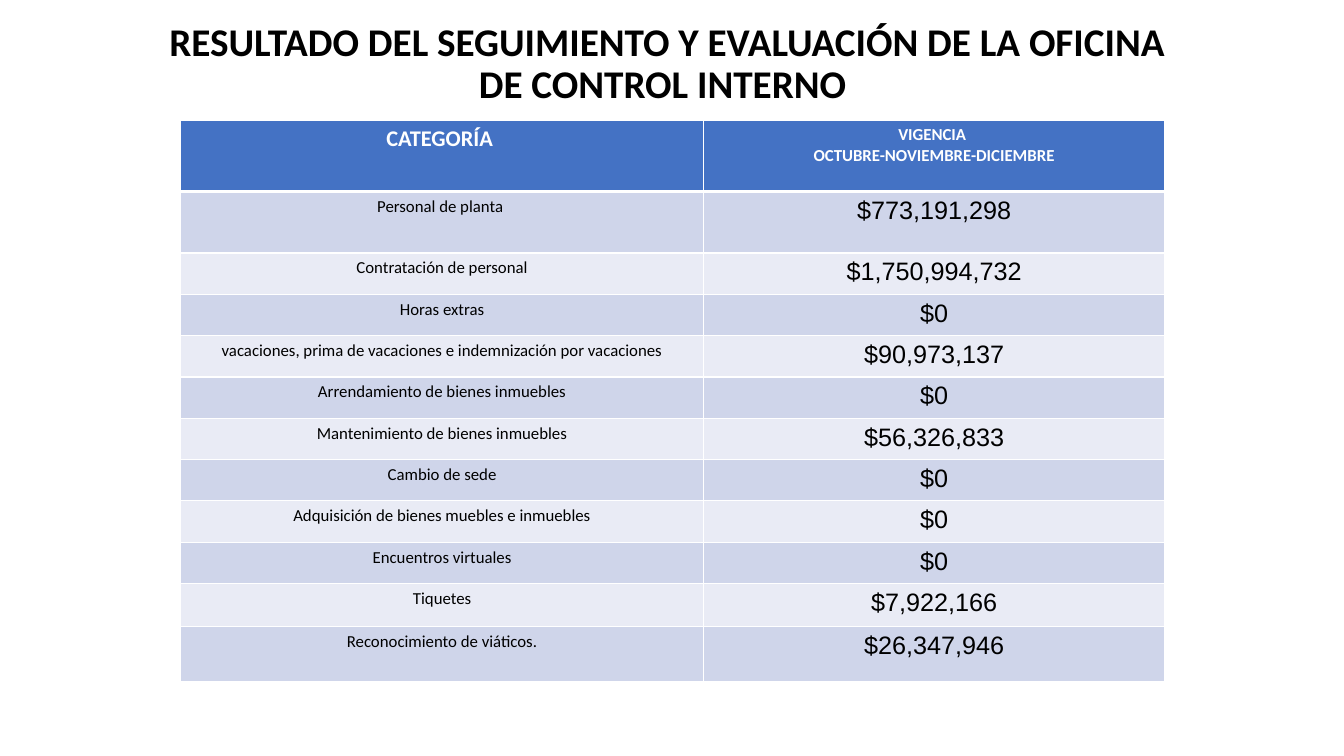
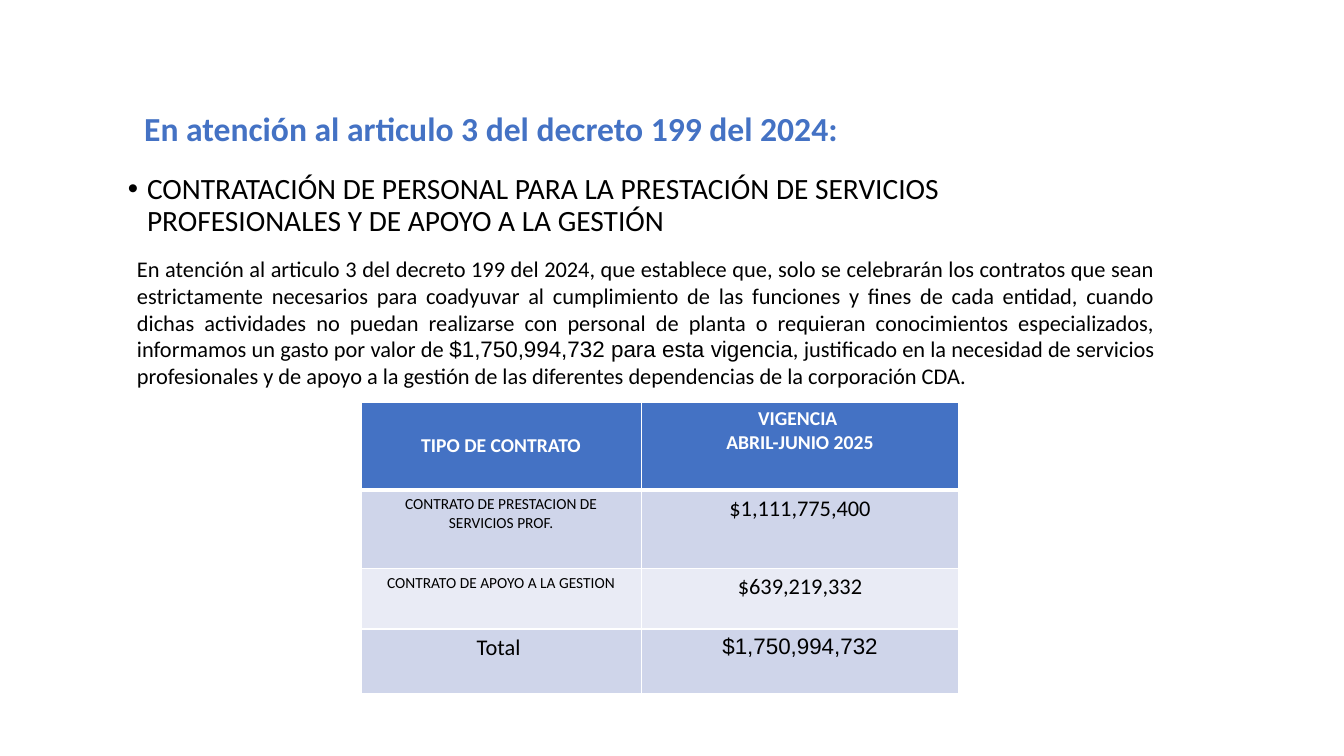
"""Build two slides on the internal control office's spending review."""
from lxml import etree
from pptx import Presentation
from pptx.dml.color import RGBColor
from pptx.enum.text import MSO_ANCHOR, MSO_AUTO_SIZE, PP_ALIGN
from pptx.oxml.ns import qn
from pptx.util import Inches, Pt

LEFT, CENTER, JUSTIFY = PP_ALIGN.LEFT, PP_ALIGN.CENTER, PP_ALIGN.JUSTIFY
TOP, MIDDLE = MSO_ANCHOR.TOP, MSO_ANCHOR.MIDDLE
NO_AUTOFIT = MSO_AUTO_SIZE.NONE
BLACK = RGBColor(0x00, 0x00, 0x00)
WHITE = RGBColor(0xFF, 0xFF, 0xFF)
BLUE = RGBColor(0x44, 0x72, 0xC4)
BANDS = (RGBColor(0xCF, 0xD5, 0xEA), RGBColor(0xE9, 0xEB, 0xF5))
BODY_FONT, FIGURE_FONT = "Calibri", "Arial"
SLIDE_SIZE = (13.33, 7.5)
TITLE_ONLY = 5

RESULTS_TITLE = "RESULTADO DEL SEGUIMIENTO Y EVALUACIÓN DE LA OFICINA DE CONTROL INTERNO "
SPENDING_HEADER = [("CATEGORÍA ", 16, TOP), ("VIGENCIA \nOCTUBRE-NOVIEMBRE-DICIEMBRE", 12, TOP)]
SPENDING = [
    ("Personal de planta ", "$773,191,298"),
    ("Contratación de personal", "$1,750,994,732"),
    ("Horas extras", "$0"),
    ("vacaciones, prima de vacaciones e indemnización por vacaciones", "$90,973,137"),
    ("Arrendamiento de bienes inmuebles", "$0"),
    ("Mantenimiento de bienes inmuebles", "$56,326,833"),
    ("Cambio de sede", "$0"),
    ("Adquisición de bienes muebles e inmuebles", "$0"),
    ("Encuentros virtuales", "$0"),
    ("Tiquetes", "$7,922,166"),
    ("Reconocimiento de viáticos.", "$26,347,946"),
]
SPENDING_HEIGHTS = [0.71, 0.61] + [0.41] * 8 + [0.43, 0.54]

DECREE_TITLE = "En atención al articulo 3 del decreto 199 del 2024:"
HIRING = "CONTRATACIÓN DE PERSONAL PARA LA PRESTACIÓN DE SERVICIOS PROFESIONALES Y DE APOYO A LA GESTIÓN"
EXPLANATION = [
    ("En atención al articulo 3 del decreto 199 del 2024, que establece que, solo se celebrarán "
     "los contratos que sean estrictamente necesarios para coadyuvar al cumplimiento de las "
     "funciones y fines de cada entidad, cuando dichas actividades no puedan realizarse con "
     "personal de planta o requieran conocimientos especializados, informamos un gasto por "
     "valor de ", BODY_FONT),
    ("$1,750,994,732 para esta vigencia", FIGURE_FONT),
    (", justificado en la necesidad de servicios profesionales y de apoyo a la gestión de las "
     "diferentes dependencias de la corporación CDA.", BODY_FONT),
]
CONTRACT_HEADER = [("TIPO DE CONTRATO", 14, MIDDLE), ("VIGENCIA \nABRIL-JUNIO 2025", 14, TOP)]
CONTRACTS = [
    (("CONTRATO DE PRESTACION DE SERVICIOS PROF.", 11, BODY_FONT), ("$1,111,775,400", 16, BODY_FONT)),
    (("CONTRATO DE APOYO A LA GESTION", 11, BODY_FONT), ("$639,219,332", 16, BODY_FONT)),
    (("Total ", 16, BODY_FONT), ("$1,750,994,732", 16, FIGURE_FONT)),
]
CONTRACT_HEIGHTS = [0.87, 0.78, 0.6, 0.64]


def add_run(paragraph, text, size, color=BLACK, bold=False, font=BODY_FONT):
    run = paragraph.add_run()
    run.text = text
    run.font.name, run.font.size, run.font.bold = font, Pt(size), bold
    run.font.color.rgb = color


def add_title(slide, box, text, size, color, alignment, anchor, wrap=True):
    title = slide.shapes.title
    title.left, title.top, title.width, title.height = map(Inches, box)
    frame = title.text_frame
    frame.auto_size, frame.word_wrap, frame.vertical_anchor = NO_AUTOFIT, wrap, anchor
    paragraph = frame.paragraphs[0]
    paragraph.alignment = alignment
    paragraph.line_spacing = 0.9 if wrap else 1.0
    add_run(paragraph, text, size, color, True)


def add_text_box(slide, box):
    frame = slide.shapes.add_textbox(*map(Inches, box)).text_frame
    frame.word_wrap = True
    return frame.paragraphs[0]


def add_bullet(paragraph, indent):
    properties = paragraph._p.get_or_add_pPr()
    properties.set("marL", str(Inches(indent)))
    properties.set("indent", str(-Inches(indent)))
    etree.SubElement(properties, qn("a:buFont")).set("typeface", FIGURE_FONT)
    etree.SubElement(properties, qn("a:buChar")).set("char", "•")


def add_borders(cell, row):
    properties = cell._tc.get_or_add_tcPr()
    widths = {"L": 1, "R": 1, "T": 3 if row == 1 else 1, "B": 3 if row == 0 else 1}
    for side, width in widths.items():
        line = etree.SubElement(properties, qn(f"a:ln{side}"), w=str(Pt(width)))
        fill = etree.SubElement(line, qn("a:solidFill"))
        etree.SubElement(fill, qn("a:srgbClr")).set("val", str(WHITE))


def fill_cell(cell, row, text, size, font, anchor):
    add_borders(cell, row)
    cell.fill.solid()
    cell.fill.fore_color.rgb = BANDS[(row - 1) % 2] if row else BLUE
    cell.vertical_anchor = anchor
    frame = cell.text_frame
    for index, line in enumerate(text.split("\n")):
        paragraph = frame.add_paragraph() if index else frame.paragraphs[0]
        paragraph.alignment = CENTER
        add_run(paragraph, line, size, BLACK if row else WHITE, row == 0, font)


def add_spending_table(slide, corner, widths, heights, header, body):
    size = (sum(widths), sum(heights))
    table = slide.shapes.add_table(len(heights), len(widths), *map(Inches, corner + size)).table
    for column, width in zip(table.columns, widths):
        column.width = Inches(width)
    for row, height in zip(table.rows, heights):
        row.height = Inches(height)
    for column, (text, points, anchor) in enumerate(header):
        fill_cell(table.cell(0, column), 0, text, points, BODY_FONT, anchor)
    for row, entries in enumerate(body, 1):
        for column, (text, points, font) in enumerate(entries):
            fill_cell(table.cell(row, column), row, text, points, font, TOP)


def build_results(slide):
    add_title(slide, (1.56, 0.1, 10.11, 1.09), RESULTS_TITLE, 28, BLACK, CENTER, MIDDLE)
    body = [((name, 12, BODY_FONT), (amount, 18, FIGURE_FONT)) for name, amount in SPENDING]
    add_spending_table(slide, (1.79, 1.19), (5.19, 4.57), SPENDING_HEIGHTS, SPENDING_HEADER, body)


def build_decree(slide):
    add_title(slide, (1.33, 1.02, 7.22, 0.5), DECREE_TITLE, 24, BLUE, LEFT, TOP, False)
    hiring = add_text_box(slide, (1.17, 1.68, 9.4, 0.8))
    add_bullet(hiring, 0.19)
    hiring.line_spacing = 0.9
    add_run(hiring, HIRING, 21)
    explanation = add_text_box(slide, (1.26, 2.48, 10.29, 1.45))
    explanation.alignment = JUSTIFY
    for text, font in EXPLANATION:
        add_run(explanation, text, 16, font=font)
    add_spending_table(slide, (3.58, 3.99), (2.78, 3.15), CONTRACT_HEIGHTS, CONTRACT_HEADER, CONTRACTS)


def main():
    presentation = Presentation()
    presentation.slide_width, presentation.slide_height = map(Inches, SLIDE_SIZE)
    for build in (build_results, build_decree):
        build(presentation.slides.add_slide(presentation.slide_layouts[TITLE_ONLY]))
    presentation.save("out.pptx")


if __name__ == "__main__":
    main()
